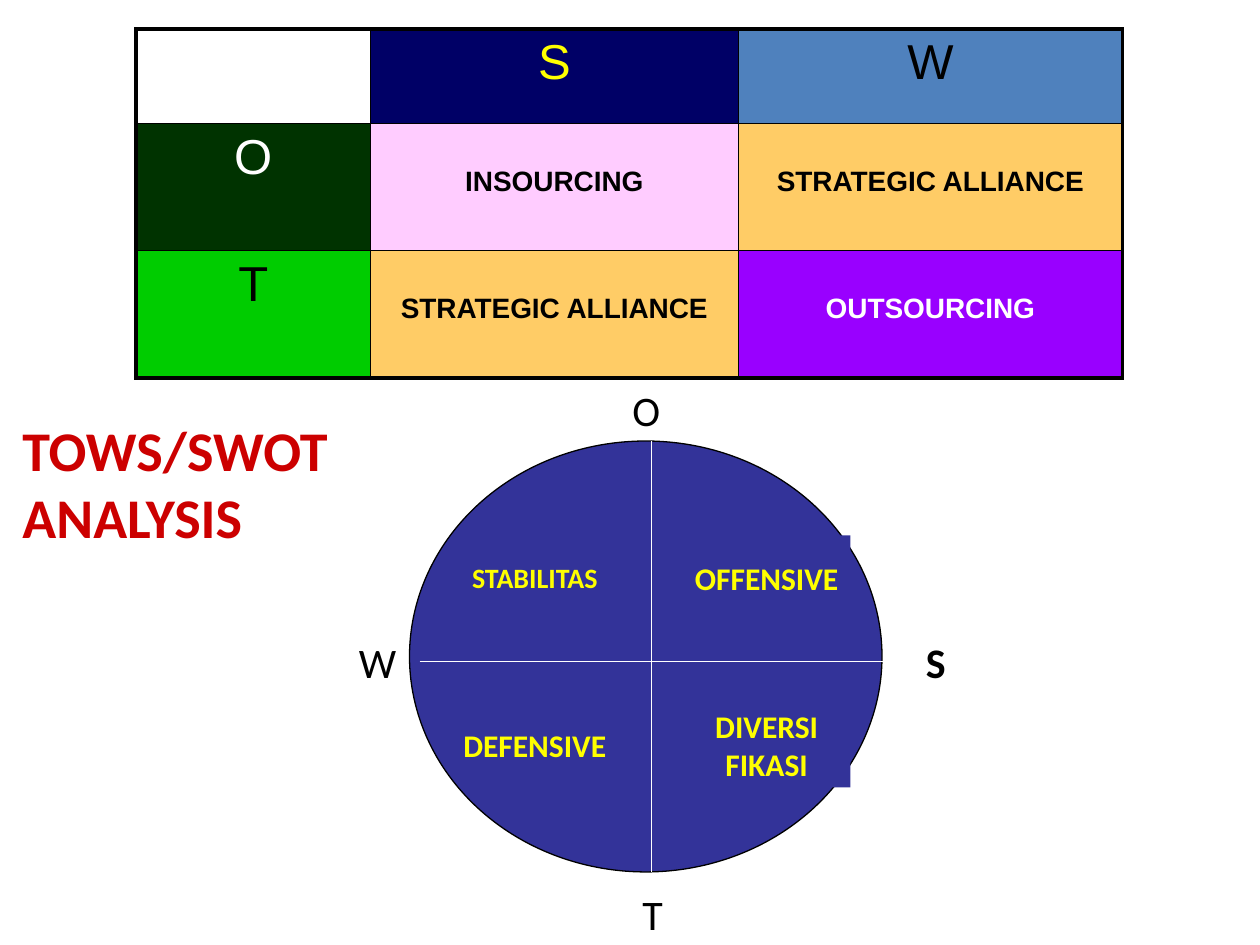
from lxml import etree
from pptx import Presentation
from pptx.dml.color import RGBColor
from pptx.enum.shapes import MSO_CONNECTOR, MSO_SHAPE
from pptx.enum.text import MSO_ANCHOR, PP_ALIGN
from pptx.oxml.ns import qn
from pptx.util import Inches, Pt

CENTER, LEFT = PP_ALIGN.CENTER, PP_ALIGN.LEFT
TOP, MIDDLE = MSO_ANCHOR.TOP, MSO_ANCHOR.MIDDLE

COLORS = {
    "black": "000000", "white": "FFFFFF", "yellow": "FFFF00", "red": "CC0000",
    "navy": "000066", "blue": "4F81BD", "forest": "003300", "green": "00CC00",
    "pink": "FFCCFF", "orange": "FFCC66", "purple": "9900FF", "indigo": "333399",
}

# Strategy matrix: text, fill, text colour
MATRIX = [
    [("", None, "black"), ("S", "navy", "yellow"), ("W", "blue", "black")],
    [("O", "forest", "white"), ("INSOURCING", "pink", "black"),
     ("STRATEGIC ALLIANCE", "orange", "black")],
    [("T", "green", "black"), ("STRATEGIC ALLIANCE", "orange", "black"),
     ("OUTSOURCING", "purple", "white")],
]
MATRIX_LEFT, MATRIX_TOP = 1.08, 0.23
COLUMN_WIDTHS = [1.86, 2.92, 3.05]
ROW_HEIGHTS = [0.75, 1.01, 1.01]
OUTER_BORDER, INNER_BORDER = 2.25, 1

# Quadrant circle: text, column, row, size, fill
CIRCLE = (3.25, 3.5, 3.75, 3.42)
AXES = [((5.17, 3.5), (5.17, 6.92)), ((3.33, 5.25), (7.08, 5.25))]
QUADRANTS = [
    ("STABILITAS", 0, 0, 16, None), ("OFFENSIVE", 1, 0, 18, "indigo"),
    ("DEFENSIVE", 0, 1, 18, None), ("DIVERSI\nFIKASI", 1, 1, 18, "indigo"),
]
QUADRANT_LEFTS, QUADRANT_TOPS = [3.58, 5.42], [4.25, 5.58]
QUADRANT_SIZE = (1.33, 0.67)

# Free labels: text, place, size, colour, bold
LABELS = [
    ("S", (7.25, 5, 0.42, 0.5), 24, "black", True),
    ("W", (2.75, 5, 0.52, 0.5), 24, "black", False),
    ("O", (4.92, 3, 0.46, 0.5), 24, "black", False),
    ("T", (5, 7, 0.4, 0.5), 24, "black", False),
    ("TOWS/SWOT\nANALYSIS", (0.08, 3.25, 2.99, 1.17), 32, "red", True),
]


def rgb(name):
    return RGBColor.from_string(COLORS[name])


def inches(values):
    return [Inches(value) for value in values]


def write(frame, text, font, size, color, bold, align):
    frame.text = text
    for para in frame.paragraphs:
        para.alignment = align
        for span in para.runs:
            span.font.name = font
            span.font.size = Pt(size)
            span.font.bold = bold
            span.font.color.rgb = rgb(color)


def paint(target, color):
    if color:
        target.fill.solid()
        target.fill.fore_color.rgb = rgb(color)
    else:
        target.fill.background()


def set_borders(cell, widths):
    props = cell._tc.get_or_add_tcPr()
    for index, (side, width) in enumerate(widths.items()):
        line = etree.Element(qn(f"a:{side}"), w=str(Pt(width)))
        fill = etree.SubElement(line, qn("a:solidFill"))
        etree.SubElement(fill, qn("a:srgbClr"), val=COLORS["black"])
        props.insert(index, line)


def add_matrix(page):
    rows, columns = len(ROW_HEIGHTS), len(COLUMN_WIDTHS)
    place = inches((MATRIX_LEFT, MATRIX_TOP, sum(COLUMN_WIDTHS), sum(ROW_HEIGHTS)))
    table = page.shapes.add_table(rows, columns, *place).table
    for column, width in zip(table.columns, COLUMN_WIDTHS):
        column.width = Inches(width)
    for row, height in zip(table.rows, ROW_HEIGHTS):
        row.height = Inches(height)
    for r, line in enumerate(MATRIX):
        for c, (text, fill, color) in enumerate(line):
            cell = table.cell(r, c)
            heading = r == 0 or c == 0
            cell.margin_top = Inches(0.05 if heading else 0.34)
            write(cell.text_frame, text, "Arial", 28 if heading else 16,
                  color, not heading, CENTER)
            paint(cell, fill)
            on_edge = {"lnL": c == 0, "lnR": c == columns - 1,
                       "lnT": r == 0, "lnB": r == rows - 1}
            set_borders(cell, {side: OUTER_BORDER if edge else INNER_BORDER
                               for side, edge in on_edge.items()})


def add_label(page, text, place, size, color, bold,
              align=LEFT, anchor=TOP, fill=None, side_margin=0.1):
    if fill:
        box = page.shapes.add_shape(MSO_SHAPE.RECTANGLE, *inches(place))
        box.shadow.inherit = False
        box.line.fill.background()
        paint(box, fill)
    else:
        box = page.shapes.add_textbox(*inches(place))
    frame = box.text_frame
    frame.word_wrap = False
    frame.vertical_anchor = anchor
    frame.margin_left = frame.margin_right = Inches(side_margin)
    write(frame, text, "Calibri", size, color, bold, align)


def add_circle(page):
    circle = page.shapes.add_shape(MSO_SHAPE.OVAL, *inches(CIRCLE))
    circle.shadow.inherit = False
    paint(circle, "indigo")
    circle.line.color.rgb = rgb("black")
    circle.line.width = Pt(0.75)
    for start, end in AXES:
        axis = page.shapes.add_connector(MSO_CONNECTOR.STRAIGHT, *inches(start + end))
        axis.line.color.rgb = rgb("white")
        axis.line.width = Pt(0.75)
        etree.SubElement(axis._element.spPr, qn("a:effectLst"))
    # Without side margins each word fits its quadrant on one line
    for text, column, row, size, fill in QUADRANTS:
        place = (QUADRANT_LEFTS[column], QUADRANT_TOPS[row], *QUADRANT_SIZE)
        add_label(page, text, place, size, "yellow", True,
                  CENTER, MIDDLE, fill, side_margin=0)


def main():
    deck = Presentation()
    deck.slide_width, deck.slide_height = Inches(10), Inches(7.5)
    page = deck.slides.add_slide(deck.slide_layouts[6])
    add_matrix(page)
    add_circle(page)
    for label in LABELS:
        add_label(page, *label)
    deck.save("out.pptx")


if __name__ == "__main__":
    main()
